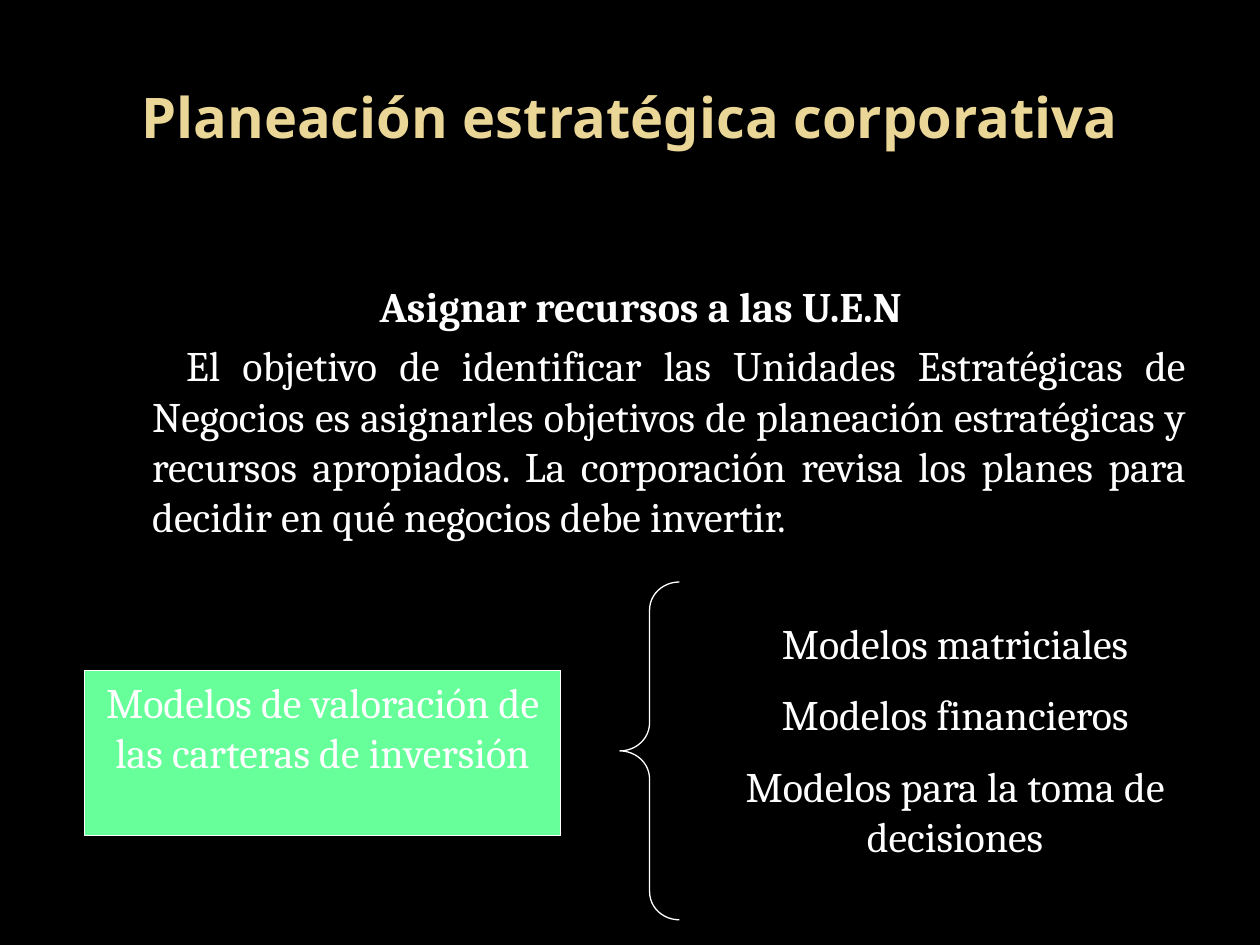
from dataclasses import dataclass

import pptx
import pptx.dml.color
import pptx.enum.shapes
import pptx.enum.text
import pptx.util

Pt = pptx.util.Pt
RGB = pptx.dml.color.RGBColor
ALIGN = pptx.enum.text.PP_ALIGN
ANCHOR = pptx.enum.text.MSO_ANCHOR
SHAPE = pptx.enum.shapes.MSO_SHAPE


@dataclass(frozen=True)
class Theme:
    background: RGB = RGB(0, 0, 0)
    title: RGB = RGB(0xEA, 0xD6, 0x96)
    text: RGB = RGB(255, 255, 255)
    box: RGB = RGB(0x66, 0xFF, 0x99)
    title_font: str = "Noto Sans"
    body_font: str = "Cambria"
    title_size: float = 32
    body_size: float = 24
    line_width: float = 0.75


THEME = Theme()


def add_run(p, text, font=THEME.body_font, size=THEME.body_size,
            color=THEME.text, bold=False):
    r = p.add_run()
    r.text = text
    r.font.name = font
    r.font.size = Pt(size)
    r.font.color.rgb = color
    r.font.bold = bold


def format_paragraph(p, align=ALIGN.CENTER, before=0, margin=0, indent=0):
    p.alignment = align
    p.space_before = Pt(before)
    if margin:
        pPr = p._p.get_or_add_pPr()
        pPr.set("marL", str(Pt(margin)))
        pPr.set("indent", str(Pt(indent)))


def add_text_box(s, x, y, w, h, anchor=ANCHOR.TOP):
    sp = s.shapes.add_textbox(Pt(x), Pt(y), Pt(w), Pt(h))
    tf = sp.text_frame
    tf.word_wrap = True
    tf.vertical_anchor = anchor
    return tf


def add_outlined_shape(s, kind, x, y, w, h, fill=None):
    sp = s.shapes.add_shape(kind, Pt(x), Pt(y), Pt(w), Pt(h))
    sp.shadow.inherit = False
    if fill is None:
        sp.fill.background()
    else:
        sp.fill.solid()
        sp.fill.fore_color.rgb = fill
    sp.line.color.rgb = THEME.text
    sp.line.width = Pt(THEME.line_width)
    return sp


def add_title(s, text):
    tf = add_text_box(s, 36, 21.6, 648, 90, ANCHOR.MIDDLE)
    p = tf.paragraphs[0]
    format_paragraph(p)
    add_run(p, text, THEME.title_font, THEME.title_size, THEME.title, True)


def add_body(s, heading, text):
    tf = add_text_box(s, 36.7, 157, 648, 347)
    p = tf.paragraphs[0]
    format_paragraph(p, before=4.8, margin=43.2, indent=-32.4)
    add_run(p, heading, bold=True)
    p = tf.add_paragraph()
    format_paragraph(p, ALIGN.JUSTIFY, before=4.8, margin=43.2, indent=19.4)
    add_run(p, text)


def add_box(s, text):
    sp = add_outlined_shape(s, SHAPE.RECTANGLE, 48.2, 383, 272.2, 94.3, THEME.box)
    tf = sp.text_frame
    tf.word_wrap = True
    tf.vertical_anchor = ANCHOR.TOP
    p = tf.paragraphs[0]
    format_paragraph(p, before=12)
    add_run(p, text)


def add_brace(s):
    sp = add_outlined_shape(s, SHAPE.LEFT_BRACE, 354.2, 332.6, 34, 193)
    sp.adjustments[0] = 0.47
    sp.adjustments[1] = 0.5


def add_models(s, models):
    tf = add_text_box(s, 371.5, 349.2, 348.5, 151.2)
    for i, model in enumerate(models):
        p = tf.add_paragraph() if i else tf.paragraphs[0]
        format_paragraph(p, before=12)
        add_run(p, model)


def main():
    prs = pptx.Presentation()
    prs.slide_width, prs.slide_height = Pt(720), Pt(540)
    s = prs.slides.add_slide(prs.slide_layouts[6])
    s.background.fill.solid()
    s.background.fill.fore_color.rgb = THEME.background

    add_title(s, "Planeación estratégica corporativa")
    add_body(
        s,
        "Asignar recursos a las U.E.N",
        "El objetivo de identificar las Unidades Estratégicas de Negocios es "
        "asignarles objetivos de planeación estratégicas y recursos apropiados. "
        "La corporación revisa los planes para decidir en qué negocios debe invertir.",
    )
    add_box(s, "Modelos de valoración de las carteras de inversión")
    add_brace(s)
    add_models(s, ["Modelos matriciales", "Modelos financieros",
                   "Modelos para la toma de decisiones"])
    prs.save("out.pptx")


if __name__ == "__main__":
    main()
